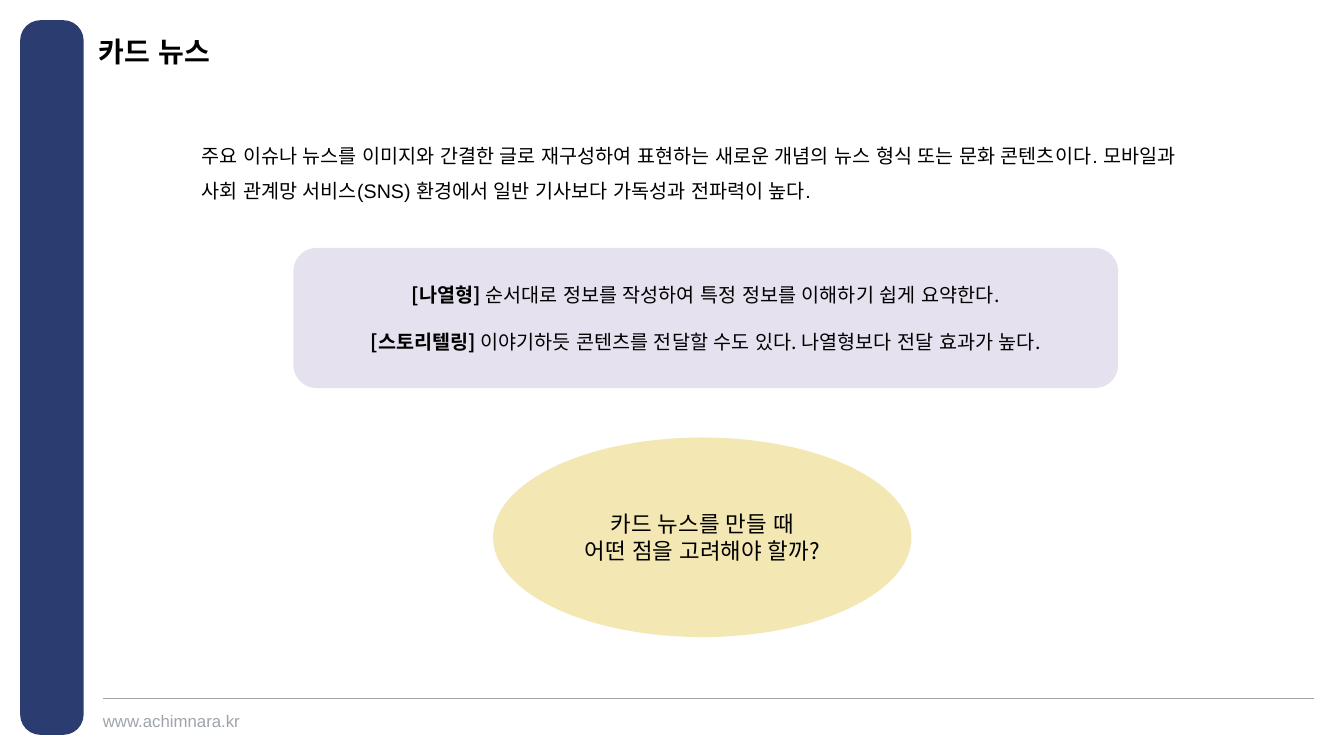
from lxml import etree
from pptx import Presentation
from pptx.dml.color import RGBColor
from pptx.enum.lang import MSO_LANGUAGE_ID
from pptx.enum.shapes import MSO_CONNECTOR, MSO_SHAPE
from pptx.enum.text import MSO_ANCHOR, PP_ALIGN
from pptx.oxml.ns import qn
from pptx.util import Pt

PX = 9144  # EMU per px, 100 px to the inch
NAVY = RGBColor(0x2B, 0x3C, 0x71)
GRAY = RGBColor(0x9E, 0xA4, 0xAA)
BLACK = RGBColor(0, 0, 0)
LAVENDER = RGBColor(0xCE, 0xC5, 0xE1)
CREAM = RGBColor(0xF3, 0xE7, 0xB3)
LATIN, KOREAN = "Arial", "Noto Sans CJK KR"

ROUNDED, OVAL = MSO_SHAPE.ROUNDED_RECTANGLE, MSO_SHAPE.OVAL
STRAIGHT = MSO_CONNECTOR.STRAIGHT
TOP, MIDDLE = MSO_ANCHOR.TOP, MSO_ANCHOR.MIDDLE
CENTER = PP_ALIGN.CENTER
KO = MSO_LANGUAGE_ID.KOREAN


def emu(box):
    return [length * PX for length in box]


def style_run(run, size, typeface, color=BLACK, bold=False):
    font = run.font
    font.size, font.name, font.bold = Pt(size), typeface, bold
    font.color.rgb = color
    font.language_id = KO
    east_asian = etree.SubElement(run._r.get_or_add_rPr(), qn("a:ea"))
    east_asian.set("typeface", KOREAN)


def add_panel(slide, kind, box, color):
    panel = slide.shapes.add_shape(kind, *emu(box))
    panel.shadow.inherit = False
    panel.fill.solid()
    panel.fill.fore_color.rgb = color
    panel.line.fill.background()
    panel.text_frame.word_wrap = True
    panel.text_frame.vertical_anchor = MIDDLE
    return panel


def add_label(slide, box, wording, size, color=BLACK, bold=False,
              spacing=None, inset=0, anchor=TOP):
    frame = slide.shapes.add_textbox(*emu(box)).text_frame
    frame.word_wrap = True
    frame.vertical_anchor = anchor
    if not inset:
        frame.margin_left = frame.margin_right = 0
        frame.margin_top = frame.margin_bottom = 0
    paragraph = frame.paragraphs[0]
    paragraph.text = wording
    paragraph.line_spacing = spacing
    style_run(paragraph.runs[0], size, LATIN, color, bold)


def add_sidebar(slide, box):
    sidebar = add_panel(slide, ROUNDED, box, NAVY)
    sidebar.adjustments[0] = 0.32


def add_footer(slide, box):
    left, top, width, height = box
    rule = slide.shapes.add_connector(
        STRAIGHT, *emu((left + width, top, left, top)))
    rule.line.color.rgb = GRAY
    rule.line.width = Pt(0.5)
    etree.SubElement(rule._element.spPr, qn("a:effectLst"))
    add_label(slide, (left, top + height - 20, 150, 20),
              "www.achimnara.kr", 12, GRAY)


def add_types(slide, box):
    """Translucent card describing the two types of card news."""
    card = add_panel(slide, ROUNDED, box, LAVENDER)
    color = card.fill._xPr.find(".//" + qn("a:srgbClr"))
    etree.SubElement(color, qn("a:alpha")).set("val", "50000")
    types = [
        ("[나열형]", " 순서대로 정보를 작성하여 특정 정보를 이해하기 쉽게 요약한다.", None),
        ("[스토리텔링]", " 이야기하듯 콘텐츠를 전달할 수도 있다. 나열형보다 전달 효과가 높다.", 2.0),
    ]
    frame = card.text_frame
    frame.text = "\n".join(name for name, _, _ in types)
    for paragraph, (_, description, spacing) in zip(frame.paragraphs, types):
        paragraph.alignment = CENTER
        paragraph.line_spacing = spacing
        style_run(paragraph.runs[0], 14, KOREAN, bold=True)
        description_run = paragraph.add_run()
        description_run.text = description
        style_run(description_run, 14, KOREAN)


def add_question(slide, box):
    frame = add_panel(slide, OVAL, box, CREAM).text_frame
    frame.text = "카드 뉴스를 만들 때\n어떤 점을 고려해야 할까?"
    for paragraph in frame.paragraphs:
        paragraph.alignment = CENTER
        style_run(paragraph.runs[0], 16, KOREAN)


def main():
    deck = Presentation()
    deck.slide_width, deck.slide_height = emu((1333, 750))
    slide = deck.slides.add_slide(deck.slide_layouts[6])
    add_sidebar(slide, (20, 20, 63, 709))
    add_footer(slide, (102, 693, 1201, 32))
    add_label(slide, (98, 39, 787, 28), "카드 뉴스", 20, bold=True,
              spacing=0.9, anchor=MIDDLE)
    add_label(slide, (190, 126, 1013, 76),
              "주요 이슈나 뉴스를 이미지와 간결한 글로 재구성하여 표현하는 새로운 개념의 "
              "뉴스 형식 또는 문화 콘텐츠이다. 모바일과 사회 관계망 서비스(SNS) 환경에서 "
              "일반 기사보다 가독성과 전파력이 높다.", 14, spacing=1.5, inset=10)
    add_types(slide, (291, 246, 818, 139))
    add_question(slide, (489, 434, 415, 198))
    deck.save("out.pptx")


if __name__ == "__main__":
    main()
